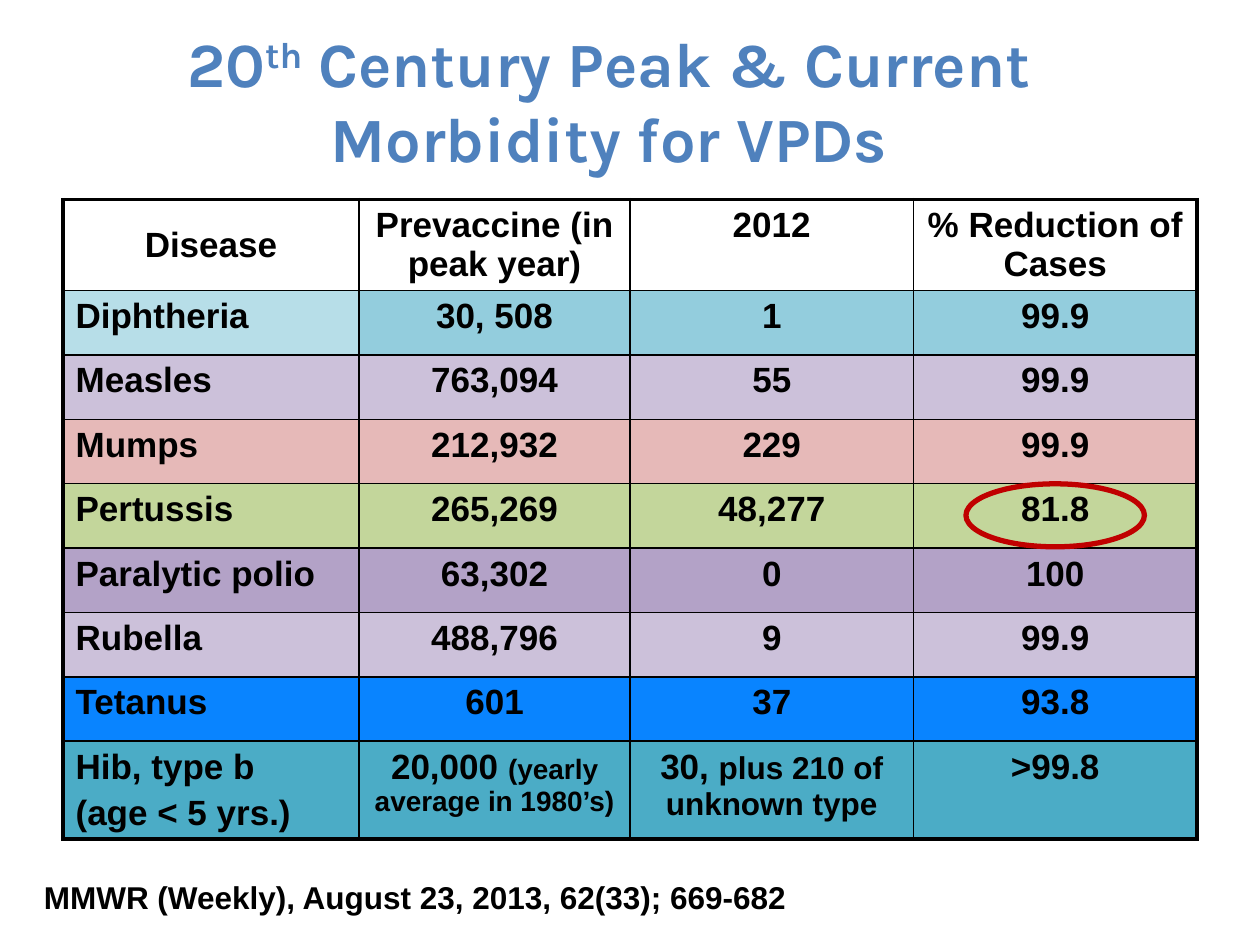
from lxml import etree
from pptx import Presentation
from pptx.dml.color import RGBColor
from pptx.enum.shapes import MSO_SHAPE
from pptx.enum.text import MSO_ANCHOR, MSO_AUTO_SIZE, PP_ALIGN
from pptx.oxml.ns import qn
from pptx.util import Pt

CENTER, LEFT = PP_ALIGN.CENTER, PP_ALIGN.LEFT
MIDDLE, TOP = MSO_ANCHOR.MIDDLE, MSO_ANCHOR.TOP
FIT_SHAPE = MSO_AUTO_SIZE.SHAPE_TO_FIT_TEXT
ELLIPSE = MSO_SHAPE.OVAL

BLACK = RGBColor(0x00, 0x00, 0x00)
TITLE_BLUE = RGBColor(0x4F, 0x81, 0xBD)
PALE_AQUA = RGBColor(0xB7, 0xDE, 0xE8)
AQUA = RGBColor(0x93, 0xCD, 0xDD)
LILAC = RGBColor(0xCC, 0xC1, 0xDA)
ROSE = RGBColor(0xE6, 0xB9, 0xB8)
GREEN = RGBColor(0xC3, 0xD6, 0x9B)
PURPLE = RGBColor(0xB3, 0xA2, 0xC7)
BRIGHT_BLUE = RGBColor(0x09, 0x84, 0xFF)
TEAL = RGBColor(0x4B, 0xAC, 0xC6)
RING_RED = RGBColor(0xC0, 0x00, 0x00)

COLUMN_WIDTHS = [169.2, 154.8, 162, 162]
ROW_HEIGHTS = [52] + [36.8] * 7 + [56]
THIN, THICK = 1, 2.25

MORBIDITY = [
    (None, ["Disease", "Prevaccine (in peak year)", "2012", "% Reduction of Cases"]),
    (AQUA, ["Diphtheria", "30, 508", "1", "99.9"]),
    (LILAC, ["Measles", "763,094", "55", "99.9"]),
    (ROSE, ["Mumps", "212,932", "229", "99.9"]),
    (GREEN, ["Pertussis", "265,269", "48,277", "81.8"]),
    (PURPLE, ["Paralytic polio", "63,302", "0", "100"]),
    (LILAC, ["Rubella", "488,796", "9", "99.9"]),
    (BRIGHT_BLUE, ["Tetanus", "601", "37", "93.8"]),
    (TEAL, ["Hib, type b\n(age < 5 yrs.)", "20,000 ", "30, ", ">99.8"]),
]
QUALIFIERS = {
    (8, 1): ("(yearly average in 1980’s)", 16),
    (8, 2): ("plus 210 of unknown type", 18),
}


def style_run(run, size, font_name="Arial", color=BLACK):
    run.font.size = Pt(size)
    run.font.name = font_name
    run.font.bold = True
    run.font.color.rgb = color


def set_borders(cell, widths):
    properties = cell._tc.get_or_add_tcPr()
    for side, width in widths.items():
        border = etree.SubElement(properties, qn(f"a:ln{side}"), w=str(Pt(width)))
        fill = etree.SubElement(border, qn("a:solidFill"))
        etree.SubElement(fill, qn("a:srgbClr"), val=str(BLACK))


def add_title(slide, left, top, width, height):
    title = slide.shapes.add_textbox(Pt(left), Pt(top), Pt(width), Pt(height))
    frame = title.text_frame
    frame.word_wrap = True
    frame.vertical_anchor = MIDDLE
    heading = frame.paragraphs[0]
    heading.alignment = CENTER
    for text in ("20", "th", " Century Peak & Current Morbidity for VPDs"):
        run = heading.add_run()
        run.text = text
        style_run(run, 36, "Karla", TITLE_BLUE)
    heading.runs[1]._r.get_or_add_rPr().set("baseline", "30000")


def fill_cell(cell, text, qualifier, alignment):
    cell.text_frame.text = text
    for index, paragraph in enumerate(cell.text_frame.paragraphs):
        paragraph.alignment = alignment
        if index:
            paragraph.space_before = Pt(4)
        for run in paragraph.runs:
            style_run(run, 20)
    if qualifier:
        note, size = qualifier
        run = cell.text_frame.paragraphs[0].add_run()
        run.text = note
        style_run(run, size)


def add_morbidity_table(slide, left, top):
    last_row, last_column = len(ROW_HEIGHTS) - 1, len(COLUMN_WIDTHS) - 1
    table = slide.shapes.add_table(
        last_row + 1, last_column + 1, Pt(left), Pt(top),
        Pt(sum(COLUMN_WIDTHS)), Pt(sum(ROW_HEIGHTS))).table
    table.first_row = False
    table.horz_banding = False
    for column, width in zip(table.columns, COLUMN_WIDTHS):
        column.width = Pt(width)
    for row, height in zip(table.rows, ROW_HEIGHTS):
        row.height = Pt(height)
    for r, (color, texts) in enumerate(MORBIDITY):
        for c, text in enumerate(texts):
            cell = table.cell(r, c)
            fill_cell(cell, text, QUALIFIERS.get((r, c)), CENTER if r == 0 or c else LEFT)
            cell.vertical_anchor = MIDDLE if r == c == 0 else TOP
            set_borders(cell, {
                "L": THICK if c == 0 else THIN,
                "R": THICK if c == last_column else THIN,
                "T": THICK if r == 0 else THIN,
                "B": THICK if r == last_row else THIN,
            })
            if color is None:
                cell.fill.background()
            else:
                cell.fill.solid()
                cell.fill.fore_color.rgb = PALE_AQUA if (r, c) == (1, 0) else color


def add_pertussis_ring(slide, left, top, width, height):
    ring = slide.shapes.add_shape(ELLIPSE, Pt(left), Pt(top), Pt(width), Pt(height))
    ring.shadow.inherit = False
    ring.fill.background()
    ring.line.color.rgb = RING_RED
    ring.line.width = Pt(3)


def add_citation(slide, left, top, width, height):
    citation = slide.shapes.add_textbox(Pt(left), Pt(top), Pt(width), Pt(height))
    frame = citation.text_frame
    frame.word_wrap = False
    frame.auto_size = FIT_SHAPE
    frame.text = "MMWR (Weekly), August 23, 2013, 62(33); 669-682"
    style_run(frame.paragraphs[0].runs[0], 18)


def main():
    presentation = Presentation()
    presentation.slide_width = Pt(720)
    presentation.slide_height = Pt(540)
    slide = presentation.slides.add_slide(presentation.slide_layouts[6])
    add_morbidity_table(slide, 36, 114)
    add_title(slide, 24, 12, 648, 90)
    add_citation(slide, 18, 498, 443, 29)
    add_pertussis_ring(slide, 552, 276.5, 102, 36)
    presentation.save("out.pptx")


if __name__ == "__main__":
    main()
